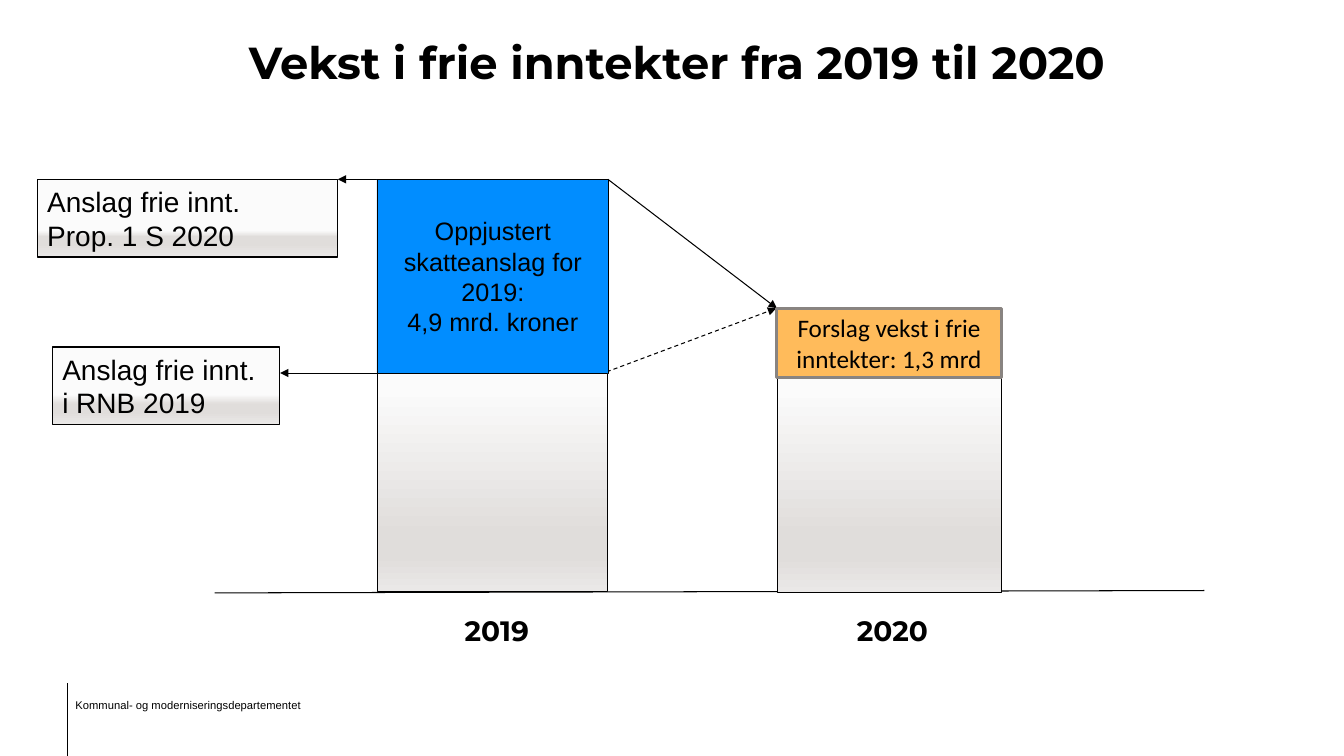
"""Build the slide on growth in free municipal income from 2019 to 2020."""
from dataclasses import dataclass

import pptx
import pptx.dml.color
import pptx.enum.dml
import pptx.enum.shapes
import pptx.enum.text
import pptx.oxml
import pptx.oxml.ns
import pptx.util
from pptx.util import Cm


@dataclass(frozen=True)
class Theme:
    """Colours, fonts and type sizes of the slide."""
    ink: str = "000000"
    tax_blue: str = "018DFF"
    growth_orange: str = "FFBB5B"
    growth_edge: str = "898481"
    greys: tuple = ("FBFBFB", "E0DDDB", "E0DDDB", "EAE8E7")
    heading_font: str = "Montserrat"
    body_font: str = "Arial"
    growth_font: str = "Calibri"
    title_size: int = 32
    label_size: int = 20
    box_size: int = 18
    footer_size: int = 8


THEME = Theme()
LEFT = pptx.enum.text.PP_ALIGN.LEFT
CENTER = pptx.enum.text.PP_ALIGN.CENTER


def rgb(value):
    """Turn a hex string into a colour."""
    return pptx.dml.color.RGBColor.from_string(value)


def write(shape, text, size, font, bold=False, align=CENTER, spacing=None):
    """Put formatted, wrapped text into a shape."""
    frame = shape.text_frame
    frame.word_wrap = True
    frame.text = text
    for paragraph in frame.paragraphs:
        paragraph.alignment = align
        paragraph.line_spacing = spacing
        for run in paragraph.runs:
            run.font.size = pptx.util.Pt(size)
            run.font.name = font
            run.font.bold = bold
            run.font.color.rgb = rgb(THEME.ink)


def add_text(slide, area, text, size, font, **style):
    """Add a text box at left, top, width, height in centimetres."""
    caption = slide.shapes.add_textbox(*map(Cm, area))
    write(caption, text, size, font, **style)


def add_box(slide, area, edge_width, edge=THEME.ink):
    """Add an outlined rectangle without shadow."""
    box = slide.shapes.add_shape(
        pptx.enum.shapes.MSO_SHAPE.RECTANGLE, *map(Cm, area))
    box.shadow.inherit = False
    box.line.color.rgb = rgb(edge)
    box.line.width = pptx.util.Pt(edge_width)
    box.text_frame.vertical_anchor = pptx.enum.text.MSO_ANCHOR.MIDDLE
    return box


def add_solid_box(slide, area, color, text, font, edge_width, edge=THEME.ink):
    """Add a plain coloured box with centred text."""
    box = add_box(slide, area, edge_width, edge)
    box.fill.solid()
    box.fill.fore_color.rgb = rgb(color)
    write(box, text, THEME.box_size, font)


def add_grey_box(slide, area, light_until, edge_width):
    """Add a box shaded downwards, light down to the given percentage."""
    box = add_box(slide, area, edge_width)
    box.fill.gradient()
    box.fill.gradient_angle = 270
    stops = box.fill.gradient_stops
    stop_list = stops[0]._gs.getparent()
    for stop in list(stop_list):
        stop_list.remove(stop)
    for position, color in zip((light_until, 74, 83, 100), THEME.greys):
        stop_list.append(pptx.oxml.parse_xml(
            f'<a:gs {pptx.oxml.ns.nsdecls("a")} pos="{position * 1000}">'
            f'<a:srgbClr val="{color}"/></a:gs>'))
    return box


def add_label(slide, area, light_until, text):
    """Add a shaded label that names an estimate."""
    label = add_grey_box(slide, area, light_until, 1)
    write(label, text, THEME.label_size, THEME.body_font, align=LEFT)


def add_line(slide, start, end, arrow=False, dashed=False):
    """Add a thin line, optionally dashed or with an arrowhead at its end."""
    line = slide.shapes.add_connector(
        pptx.enum.shapes.MSO_CONNECTOR.STRAIGHT, *map(Cm, start + end))
    line.line.color.rgb = rgb(THEME.ink)
    line.line.width = pptx.util.Pt(0.75)
    if dashed:
        line.line.dash_style = pptx.enum.dml.MSO_LINE.DASH
    namespace = pptx.oxml.ns.nsdecls("a")
    if arrow:
        line.line._get_or_add_ln().append(
            pptx.oxml.parse_xml(f'<a:tailEnd {namespace} type="triangle"/>'))
    line._element.spPr.append(
        pptx.oxml.parse_xml(f"<a:effectLst {namespace}/>"))


def main():
    """Draw the slide and save it."""
    deck = pptx.Presentation()
    deck.slide_width, deck.slide_height = Cm(33.87), Cm(19.05)
    slide = deck.slides.add_slide(deck.slide_layouts[6])

    add_text(slide, (1.65, 17.5, 7.19, 0.56),
             "Kommunal- og moderniseringsdepartementet",
             THEME.footer_size, THEME.body_font, align=LEFT, spacing=0.9)
    add_line(slide, (1.7, 17.22), (1.7, 19.05))
    add_text(slide, (2.06, 0.74, 30.02, 1.63),
             "Vekst i frie inntekter fra 2019 til 2020",
             THEME.title_size, THEME.heading_font, bold=True)

    add_line(slide, (5.41, 14.94), (30.35, 14.88))
    for year, left in (("2019", 10.92), ("2020", 20.89)):
        add_text(slide, (left, 15.34, 3.2, 1.12), year,
                 THEME.label_size, THEME.heading_font, bold=True)

    add_label(slide, (0.94, 4.52, 7.57, 1.96), 66,
              "Anslag frie innt.\nProp. 1 S 2020")
    add_label(slide, (1.32, 8.74, 5.72, 1.96), 61,
              "Anslag frie innt. i RNB 2019")

    add_line(slide, (9.5, 4.52), (8.51, 4.52), arrow=True)
    add_line(slide, (9.65, 9.4), (7.06, 9.4), arrow=True)
    add_line(slide, (15.29, 9.37), (19.56, 7.77), arrow=True, dashed=True)
    add_line(slide, (15.32, 4.52), (19.58, 7.77), arrow=True)

    add_solid_box(slide, (9.5, 4.52, 5.84, 4.88), THEME.tax_blue,
                  "Oppjustert skatteanslag for 2019:\n4,9 mrd. kroner",
                  THEME.body_font, 0.25)
    for bar in ((9.5, 9.4, 5.82, 5.51), (19.58, 9.4, 5.66, 5.54)):
        add_grey_box(slide, bar, 7, 0.5)
    add_solid_box(slide, (19.56, 7.77, 5.69, 1.75), THEME.growth_orange,
                  "Forslag vekst i frie inntekter: 1,3 mrd",
                  THEME.growth_font, 2, THEME.growth_edge)

    deck.save("out.pptx")


if __name__ == "__main__":
    main()
